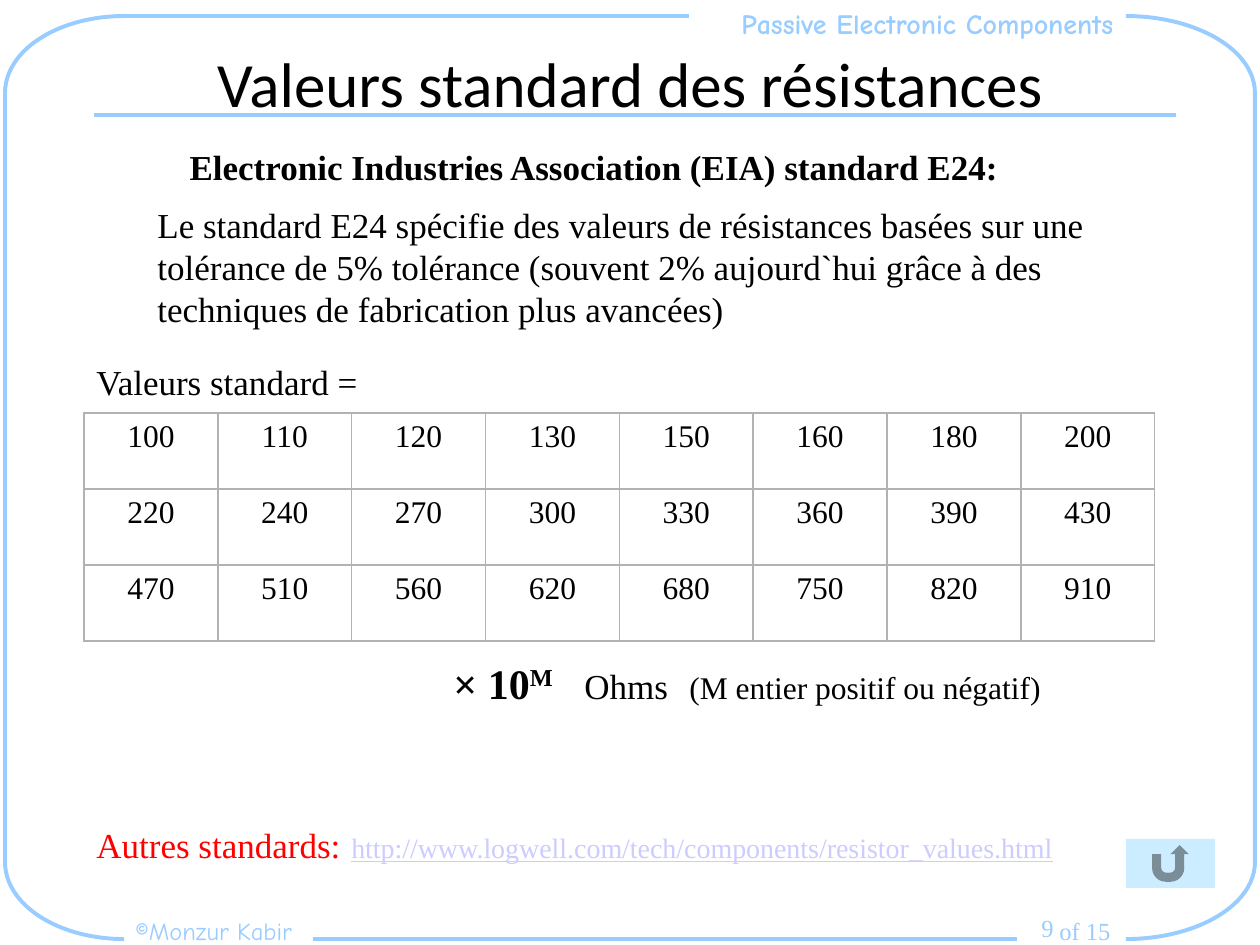
import pptx
import pptx.dml.color
import pptx.enum.shapes
import pptx.enum.text
import pptx.oxml
import pptx.oxml.ns
import pptx.util

PX = 914400 / 126
SERIF = "Times New Roman"
COMIC = "Comic Neue"
COLORS = {
    "frame": "99CCFF",
    "text": "000000",
    "grid": "B2B2B2",
    "accent": "FF0000",
    "address": "CCCCFF",
    "button": "CCECFF",
}
SHAPES = pptx.enum.shapes.MSO_SHAPE
ALIGN = pptx.enum.text.PP_ALIGN
STANDARD_VALUES = [
    [100, 110, 120, 130, 150, 160, 180, 200],
    [220, 240, 270, 300, 330, 360, 390, 430],
    [470, 510, 560, 620, 680, 750, 820, 910],
]


def emu(px):
    return pptx.util.Emu(round(px * PX))


def rgb(name):
    return pptx.dml.color.RGBColor.from_string(COLORS[name])


def format_run(run, size, color="text", font=SERIF, bold=False):
    run.font.size = pptx.util.Pt(size)
    run.font.name = font
    run.font.bold = bold
    run.font.color.rgb = rgb(color)


def add_run(paragraph, text, size, color="text", font=SERIF, bold=False):
    run = paragraph.add_run()
    run.text = text
    format_run(run, size, color, font, bold)
    return run


def add_text_box(slide, box, align=ALIGN.LEFT, wrap=True):
    """Add an empty text box and return its first paragraph."""
    frame = slide.shapes.add_textbox(*map(emu, box)).text_frame
    frame.word_wrap = wrap
    frame.paragraphs[0].alignment = align
    return frame.paragraphs[0]


def add_rule(slide, left, right, y):
    rule = slide.shapes.add_connector(
        pptx.enum.shapes.MSO_CONNECTOR.STRAIGHT, emu(left), emu(y), emu(right), emu(y))
    rule.line.color.rgb = rgb("frame")
    rule.line.width = pptx.util.Pt(2.25)
    properties = rule._element.spPr
    properties.append(pptx.oxml.parse_xml(
        f"<a:effectLst {pptx.oxml.ns.nsdecls('a')}/>"))


def add_bracket(slide, preset, box, curve):
    bracket = slide.shapes.add_shape(preset, *map(emu, box))
    bracket.adjustments[0] = curve
    bracket.shadow.inherit = False
    bracket.fill.background()
    bracket.line.color.rgb = rgb("frame")
    bracket.line.width = pptx.util.Pt(2.25)


def add_frame(slide, box):
    """Draw the rounded border, open where the header and footer texts stand."""
    left, top, width, height = box
    right, bottom = left + width, top + height
    add_bracket(slide, SHAPES.LEFT_BRACKET, (left, top, 119, height), 0.645)
    add_bracket(slide, SHAPES.RIGHT_BRACKET, (right - 129, top, 129, height), 0.596)
    add_rule(slide, left + 119, left + 684, top)
    add_rule(slide, left + 308, left + 1012, bottom)


def add_header(slide, box):
    left, top, width, height = box
    running_head = add_text_box(slide, (left + 556, top, 476, 47), ALIGN.RIGHT)
    add_run(running_head, "Passive Electronic Components", 16, "frame", COMIC, True)
    title = add_text_box(slide, (left - 31, top + 38, 1134, height - 38), ALIGN.CENTER)
    add_run(title, "Valeurs standard des résistances", 36, font="Calibri")
    add_rule(slide, left, left + width, top + 115)


def add_footer(slide, box):
    left, top, width, height = box
    owner = add_text_box(slide, (left, top + 3, 486, height))
    add_run(owner, "©Monzur Kabir", 14, "frame", COMIC)
    page = add_text_box(slide, (left + 745, top, 198, height), ALIGN.RIGHT)
    add_run(page, "9", 14, "frame")
    total = add_text_box(slide, (left + width - 77, top + 3, 77, height), wrap=False)
    add_run(total, "of 15", 14, "frame")


def add_introduction(slide, box):
    heading = add_text_box(slide, box, ALIGN.CENTER)
    add_run(heading, "Electronic Industries Association (EIA) standard E24:", 20, bold=True)
    body = heading._parent.add_paragraph()
    body.level = 1
    body._p.get_or_add_pPr().set("marL", str(emu(63)))
    body._p.get_or_add_pPr().set("indent", "0")
    body.space_before = pptx.util.Pt(9.5)
    add_run(body, "Le standard E24 spécifie des valeurs de résistances basées sur une "
            "tolérance de 5% tolérance (souvent 2% aujourd`hui grâce à des "
            "techniques de fabrication plus avancées)", 20)


def set_borders(cell):
    properties = cell._tc.get_or_add_tcPr()
    for place, side in enumerate(("lnL", "lnR", "lnT", "lnB")):
        properties.insert(place, pptx.oxml.parse_xml(
            f'<a:{side} {pptx.oxml.ns.nsdecls("a")} w="12700"><a:solidFill>'
            f'<a:srgbClr val="{COLORS["grid"]}"/></a:solidFill></a:{side}>'))


def add_values(slide, box):
    """Place the caption over the grid of standard values."""
    left, top, width, height = box
    caption = add_text_box(slide, (left, top, 289, 55))
    add_run(caption, "Valeurs standard =", 20)
    grid = slide.shapes.add_table(
        len(STANDARD_VALUES), len(STANDARD_VALUES[0]),
        emu(left), emu(top + 59), emu(width), emu(height - 59)).table
    grid.first_row = False
    grid.horz_banding = False
    for row, values in enumerate(STANDARD_VALUES):
        for column, value in enumerate(values):
            cell = grid.cell(row, column)
            cell.text_frame.text = str(value)
            paragraph = cell.text_frame.paragraphs[0]
            paragraph.alignment = ALIGN.CENTER
            format_run(paragraph.runs[0], 18)
            cell.fill.background()
            set_borders(cell)


def add_multiplier(slide, box):
    formula = add_text_box(slide, box)
    stops = "".join(f'<a:tab pos="{emu(stop)}" algn="l"/>' for stop in (131, 236))
    formula._p.get_or_add_pPr().append(pptx.oxml.parse_xml(
        f"<a:tabLst {pptx.oxml.ns.nsdecls('a')}>{stops}</a:tabLst>"))
    add_run(formula, "× 10", 24, bold=True)
    exponent = add_run(formula, "M", 24, bold=True)
    exponent.font._element.set("baseline", "30000")
    add_run(formula, "\tOhms", 20)
    add_run(formula, "\t(M entier positif ou négatif)", 18)


def add_reference(slide, box):
    reference = add_text_box(slide, box)
    add_run(reference, "Autres standards:", 20, "accent")
    add_run(reference, " ", 24)
    address = add_run(
        reference, "http://www.logwell.com/tech/components/resistor_values.html", 16, "address")
    address.font.underline = True


def add_return_button(slide, box):
    button = slide.shapes.add_shape(SHAPES.ACTION_BUTTON_RETURN, *map(emu, box))
    button.shadow.inherit = False
    button.fill.solid()
    button.fill.fore_color.rgb = rgb("button")
    button.line.fill.background()


def main():
    deck = pptx.Presentation()
    deck.slide_width, deck.slide_height = emu(1260), emu(945)
    slide = deck.slides.add_slide(deck.slide_layouts[6])
    add_frame(slide, (5, 16, 1250, 923))
    add_header(slide, (94, 0, 1082, 195))
    add_footer(slide, (123, 907, 1001, 38))
    add_introduction(slide, (82, 139, 1024, 199))
    add_values(slide, (84, 354, 1071, 287))
    add_multiplier(slide, (441, 651, 714, 63))
    add_reference(slide, (84, 810, 995, 64))
    add_return_button(slide, (1126, 839, 89, 49))
    deck.save("out.pptx")


if __name__ == "__main__":
    main()
